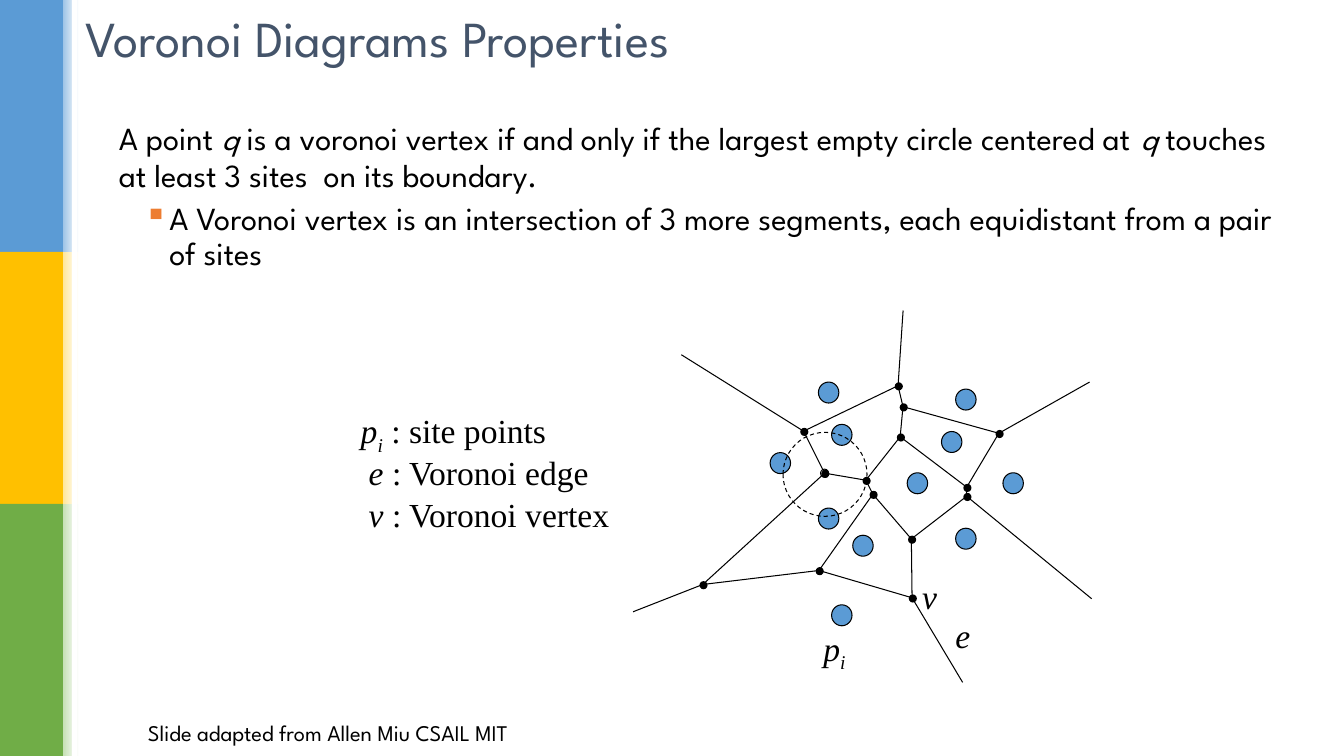
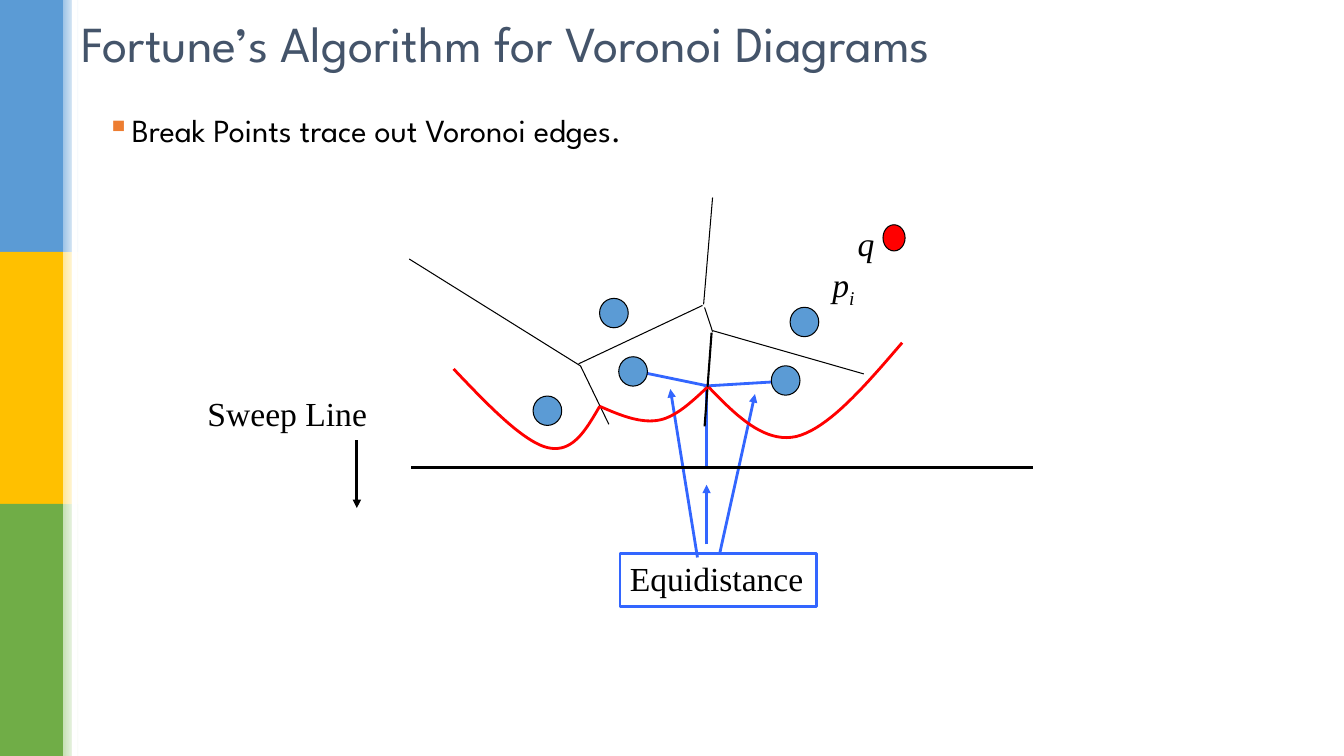
"""Build two slides on Voronoi diagrams and Fortune's algorithm."""
from dataclasses import dataclass
from typing import Any, Optional, Sequence

import lxml.etree
import pptx
import pptx.dml.color
import pptx.enum.dml
import pptx.enum.shapes
import pptx.enum.text
import pptx.oxml.ns
import pptx.util

Pt = pptx.util.Pt
RGBColor = pptx.dml.color.RGBColor
Shapes = pptx.enum.shapes.MSO_SHAPE
Anchor = pptx.enum.text.MSO_ANCHOR
Align = pptx.enum.text.PP_ALIGN
qn = pptx.oxml.ns.qn

BLACK = RGBColor(0x00, 0x00, 0x00)
WHITE = RGBColor(0xFF, 0xFF, 0xFF)
TITLE_SLATE = RGBColor(0x44, 0x54, 0x6A)
SITE_BLUE = RGBColor(0x5B, 0x9B, 0xD5)
DISTANCE_BLUE = RGBColor(0x33, 0x66, 0xFF)
BEACH_RED = RGBColor(0xFF, 0x00, 0x00)
BULLET_ORANGE = RGBColor(0xED, 0x7D, 0x31)
YELLOW = RGBColor(0xFF, 0xC0, 0x00)
GREEN = RGBColor(0x70, 0xAD, 0x47)
PALE_BLUE = RGBColor(0x9D, 0xC3, 0xE6)
PALE_YELLOW = RGBColor(0xFF, 0xE6, 0x99)
PALE_GREEN = RGBColor(0xC5, 0xE0, 0xB4)
HEADING_FONT = "League Spartan"
MATH_FONT = "Times New Roman"
HAIRLINE = 0.75
THICK = 2

Point = tuple[float, float]


@dataclass(frozen=True)
class Run:
    """A stretch of text in one format."""
    text: str
    italic: bool = False
    subscript: bool = False
    size: Optional[float] = None


@dataclass(frozen=True)
class Paragraph:
    """A paragraph of runs with its indent and bullet."""
    runs: Sequence[Run]
    indent: float = 0
    bullet: bool = False


@dataclass(frozen=True)
class Segment:
    """A straight line between two points."""
    start: Point
    end: Point
    color: RGBColor = BLACK
    width: float = HAIRLINE
    arrow: bool = False


SITE_NAME = (Run("p", italic=True), Run("i", italic=True, subscript=True))
BANDS = ((SITE_BLUE, PALE_BLUE), (YELLOW, PALE_YELLOW), (GREEN, PALE_GREEN))

VERTICES: dict[str, Point] = {
    "west": (574, 308), "north": (641.5, 275.5), "neck": (645, 290.5),
    "crown": (643, 312), "east": (713.5, 309.5), "fork": (690.5, 348),
    "fork low": (690.5, 354.5), "bay": (651, 385), "heart": (623.5, 353),
    "heart top": (618.5, 343), "circle": (589, 338), "far west": (502, 417.5),
    "south west": (585, 407.5), "south": (651.5, 427),
}
EDGES = (
    ("neck", "north"), ("heart top", "heart"), ("heart top", "crown"),
    ("bay", "fork low"), ("fork low", "fork"), ("west", "circle"),
    ("circle", "far west"), ("far west", "south west"), ("south west", "heart"),
    ("circle", "heart top"), ("crown", "fork"), ("heart", "bay"),
    ("south west", "south"), ("south", "bay"), ("crown", "neck"),
    ("west", "north"), ("neck", "east"), ("fork", "east"),
)
RAYS: dict[str, Point] = {
    "west": (486.7, 253.4), "far west": (452.2, 437), "south": (687.6, 487.4),
    "fork low": (779.8, 427.7), "east": (778.3, 272.9), "north": (645.1, 221.8),
}
SITES = (
    (601.3, 439.5), (616.4, 389.8), (655.3, 345.2), (689.9, 384.8),
    (723.7, 345.2), (679.8, 315.7), (689.9, 285.4), (591.9, 370.4),
    (557.4, 330.8), (601.3, 310.6), (591.9, 280.4),
)

SWEPT_SITES = ((561.2, 271.8), (574.6, 230), (391, 293.4), (452.2, 265.3), (438.5, 223.6))
DISTANCES = (
    Segment((450, 264.2), (506.2, 275.8), DISTANCE_BLUE, THICK),
    Segment((562.3, 272.2), (502.6, 275.8), DISTANCE_BLUE, THICK),
    Segment((504.7, 275.8), (504.7, 332.6), DISTANCE_BLUE, THICK),
    Segment((498.2, 398.2), (478.8, 277.9), DISTANCE_BLUE, THICK, True),
    Segment((504.7, 388.8), (504.7, 346.3), DISTANCE_BLUE, THICK, True),
    Segment((514.1, 395.3), (539.3, 281.5), DISTANCE_BLUE, THICK, True),
)
SWEEP = (
    Segment((293.8, 334.1), (738, 334.1), width=THICK),
    Segment((254.9, 314.6), (254.9, 362.9), width=THICK, arrow=True),
)
TRACED_EDGES = (
    Segment((509, 236.9), (503.3, 219.6)),
    Segment((292.3, 185), (414.7, 261.4)),
    Segment((414.7, 261.4), (434.9, 303.1)),
    Segment((503.3, 304.6), (508.3, 237.6), width=1.5),
    Segment((413.3, 259.9), (501.8, 218.2)),
    Segment((509, 236.2), (617, 267.1)),
    Segment((502.6, 217.4), (509, 141.1)),
)
BEACH_ARCS = (
    ((506.2, 276.5), (525.6, 296.6), (545.8, 316.8), (568.8, 311.8),
     (591.8, 306), (617.8, 275.8), (644.4, 244.8)),
    ((324, 263.5), (348.5, 289.4), (373.7, 315.4), (391, 319.7),
     (409, 324), (418.3, 307.4), (428.4, 290.2)),
    ((428.4, 290.2), (442.8, 296.6), (457.2, 302.4), (470.2, 300.2),
     (482.4, 298.1), (493.9, 287.3), (505.4, 276.5)),
)


def add_bullet(paragraph: Any) -> None:
    """Give the paragraph an orange square bullet."""
    properties = paragraph._p.get_or_add_pPr()
    tint = lxml.etree.SubElement(properties, qn("a:buClr"))
    lxml.etree.SubElement(tint, qn("a:srgbClr")).set("val", str(BULLET_ORANGE))
    lxml.etree.SubElement(properties, qn("a:buChar")).set("char", "▪")


def add_text(slide: Any, paragraphs: Sequence[Paragraph], left: float, top: float,
             width: float, height: float = 36, *, font: str = MATH_FONT, size: float = 24,
             color: RGBColor = BLACK, anchor: Any = Anchor.TOP, align: Any = Align.LEFT,
             line_spacing: float = 1, gap: float = 0, frame: Optional[RGBColor] = None) -> None:
    """Place a text box with formatted paragraphs."""
    box = slide.shapes.add_textbox(Pt(left), Pt(top), Pt(width), Pt(height))
    if frame is not None:
        box.line.color.rgb = frame
        box.line.width = Pt(THICK)
    body = box.text_frame
    body.word_wrap = True
    body.vertical_anchor = anchor
    body.margin_right = Pt(0)
    for index, content in enumerate(paragraphs):
        paragraph = body.paragraphs[0] if index == 0 else body.add_paragraph()
        paragraph.alignment = align
        paragraph.line_spacing = line_spacing
        if index:
            paragraph.space_before = Pt(gap)
        if content.indent:
            properties = paragraph._p.get_or_add_pPr()
            properties.set("marL", str(Pt(content.indent)))
            properties.set("indent", str(Pt(-18)))
        if content.bullet:
            add_bullet(paragraph)
        for piece in content.runs:
            run = paragraph.add_run()
            run.text = piece.text
            run.font.name = font
            run.font.size = Pt(piece.size or size)
            run.font.color.rgb = color
            run.font.italic = piece.italic
            if piece.subscript:
                run._r.get_or_add_rPr().set("baseline", "-25000")


def add_segment(slide: Any, segment: Segment) -> None:
    """Draw a straight line, with an arrowhead if asked."""
    ends = [Pt(value) for value in (*segment.start, *segment.end)]
    line = slide.shapes.add_connector(pptx.enum.shapes.MSO_CONNECTOR.STRAIGHT, *ends)
    line.line.color.rgb = segment.color
    line.line.width = Pt(segment.width)
    if segment.arrow:
        outline = line.line._get_or_add_ln()
        lxml.etree.SubElement(outline, qn("a:tailEnd")).set("type", "triangle")
    lxml.etree.SubElement(line._element.spPr, qn("a:effectLst"))


def add_disc(slide: Any, center: Point, width: float, height: float,
             fill: Optional[RGBColor] = None, outlined: bool = True, dashed: bool = False) -> None:
    """Draw an ellipse around a centre."""
    disc = slide.shapes.add_shape(Shapes.OVAL, Pt(center[0] - width / 2),
                                  Pt(center[1] - height / 2), Pt(width), Pt(height))
    disc.shadow.inherit = False
    if fill is None:
        disc.fill.background()
    else:
        disc.fill.solid()
        disc.fill.fore_color.rgb = fill
    if outlined:
        disc.line.color.rgb = BLACK
        disc.line.width = Pt(HAIRLINE)
    else:
        disc.line.fill.background()
    if dashed:
        disc.line.dash_style = pptx.enum.dml.MSO_LINE.DASH


def add_strip(slide: Any, left: float, top: float, width: float, height: float,
              color: RGBColor, fades: bool = False) -> None:
    """Draw one rectangle of the side band."""
    strip = slide.shapes.add_shape(Shapes.RECTANGLE, Pt(left), Pt(top), Pt(width), Pt(height))
    strip.shadow.inherit = False
    strip.line.fill.background()
    if fades:
        strip.fill.gradient()
        strip.fill.gradient_angle = 0
        for stop, shade in zip(strip.fill.gradient_stops, (color, WHITE)):
            stop.color.rgb = shade
    else:
        strip.fill.solid()
        strip.fill.fore_color.rgb = color


def bezier(a: Point, b: Point, c: Point, d: Point, steps: int = 20) -> list[Point]:
    """Return points along a cubic curve, without its start."""
    curve = []
    for step in range(1, steps + 1):
        t = step / steps
        weights = ((1 - t) ** 3, 3 * t * (1 - t) ** 2, 3 * t * t * (1 - t), t ** 3)
        x, y = (sum(w * p[axis] for w, p in zip(weights, (a, b, c, d))) for axis in (0, 1))
        curve.append((x, y))
    return curve


def add_beach_arc(slide: Any, controls: Sequence[Point]) -> None:
    """Draw one red arc of the beach line."""
    points = bezier(*controls[:4]) + bezier(*controls[3:])
    builder = slide.shapes.build_freeform(Pt(controls[0][0]), Pt(controls[0][1]))
    builder.add_line_segments([(Pt(x), Pt(y)) for x, y in points], close=False)
    arc = builder.convert_to_shape()
    arc.shadow.inherit = False
    arc.fill.background()
    arc.line.color.rgb = BEACH_RED
    arc.line.width = Pt(THICK)


def add_base_slide(deck: Any, title: str, left: float, height: float) -> Any:
    """Add a blank slide with the side band and a title."""
    slide = deck.slides.add_slide(deck.slide_layouts[6])
    for row, (color, pale) in enumerate(BANDS):
        add_strip(slide, 0, row * 180, 45, 180, color)
        add_strip(slide, 45, row * 180, 11.5, 180, pale, fades=True)
    add_strip(slide, 51.4, 0, 3.6, 540, WHITE)
    add_text(slide, [Paragraph([Run(title)])], left, 0, 800, height, font=HEADING_FONT,
             size=36, color=TITLE_SLATE, anchor=Anchor.MIDDLE)
    return slide


def build_properties(deck: Any) -> None:
    """Build the slide on Voronoi vertices."""
    slide = add_base_slide(deck, "Voronoi Diagrams Properties", 54, 54)
    add_text(slide, [Paragraph([Run("Slide adapted from Allen Miu CSAIL MIT")])], 54, 506,
             353.5, 34, font=HEADING_FONT, size=16, anchor=Anchor.MIDDLE, align=Align.CENTER)
    q = Run("q", italic=True)
    statement = (
        Run("\t", size=28), Run("A point "), q,
        Run(" is a voronoi vertex if and only if the largest empty circle centered at "), q,
        Run(" touches at least 3 sites  on its boundary."))
    reason = Run("A Voronoi vertex is an intersection of 3 more segments, "
                 "each equidistant from a pair of sites")
    add_text(slide, [Paragraph(statement, 18), Paragraph([reason], 54, True)], 59.8, 80,
             860.4, 324, font=HEADING_FONT, size=23, line_spacing=0.9, gap=6)
    for start, end in EDGES:
        add_segment(slide, Segment(VERTICES[start], VERTICES[end]))
    for start, far_end in RAYS.items():
        add_segment(slide, Segment(VERTICES[start], far_end))
    for x, y in VERTICES.values():
        add_disc(slide, (x + 0.5, y + 0.5), 5.8, 5.8, BLACK, outlined=False)
    for site in SITES:
        add_disc(slide, site, 14.6, 15, SITE_BLUE)
    add_disc(slide, VERTICES["circle"], 5.8, 5.8)
    add_disc(slide, (589.3, 338.8), 60, 60, dashed=True)
    e, v = Run("e", italic=True), Run("v", italic=True)
    legend = ((250.6, (*SITE_NAME, Run(" : site points"))),
              (256.3, (e, Run(" : Voronoi edge"))),
              (256.3, (v, Run(" : Voronoi vertex"))))
    for row, (left, runs) in enumerate(legend):
        add_text(slide, [Paragraph(runs)], left, 289.5 + 30 * row, 205)
    for left, top, runs in ((675.4, 435.6, [e]), (651.6, 408.2, [v]), (581, 445, SITE_NAME)):
        add_text(slide, [Paragraph(runs)], left, top, 40)


def build_fortune(deck: Any) -> None:
    """Build the slide on Fortune's sweep."""
    slide = add_base_slide(deck, "Fortune’s Algorithm for Voronoi Diagrams", 51, 60)
    add_text(slide, [Paragraph([Run("Break Points trace out Voronoi edges.")], 18, True)],
             69.1, 78.5, 805, 98, font=HEADING_FONT, size=23, line_spacing=0.9)
    for segment in DISTANCES + SWEEP + TRACED_EDGES:
        add_segment(slide, segment)
    add_text(slide, [Paragraph([Run("Equidistance")])], 442.8, 395.3, 140.4, 38.2,
             frame=DISTANCE_BLUE)
    add_text(slide, [Paragraph([Run("Sweep Line")])], 141.1, 277.2, 135)
    for site in SWEPT_SITES:
        add_disc(slide, site, 20.5, 21, SITE_BLUE)
    add_text(slide, [Paragraph(SITE_NAME)], 587.5, 185, 40)
    add_text(slide, [Paragraph([Run("q", italic=True)])], 605.5, 155.5, 30)
    add_disc(slide, (638.6, 169.9), 15.8, 18.7, BEACH_RED)
    for controls in BEACH_ARCS:
        add_beach_arc(slide, controls)


def main() -> None:
    """Build and save the presentation."""
    deck = pptx.Presentation()
    deck.slide_width, deck.slide_height = Pt(960), Pt(540)
    build_properties(deck)
    build_fortune(deck)
    deck.save("out.pptx")


if __name__ == "__main__":
    main()
